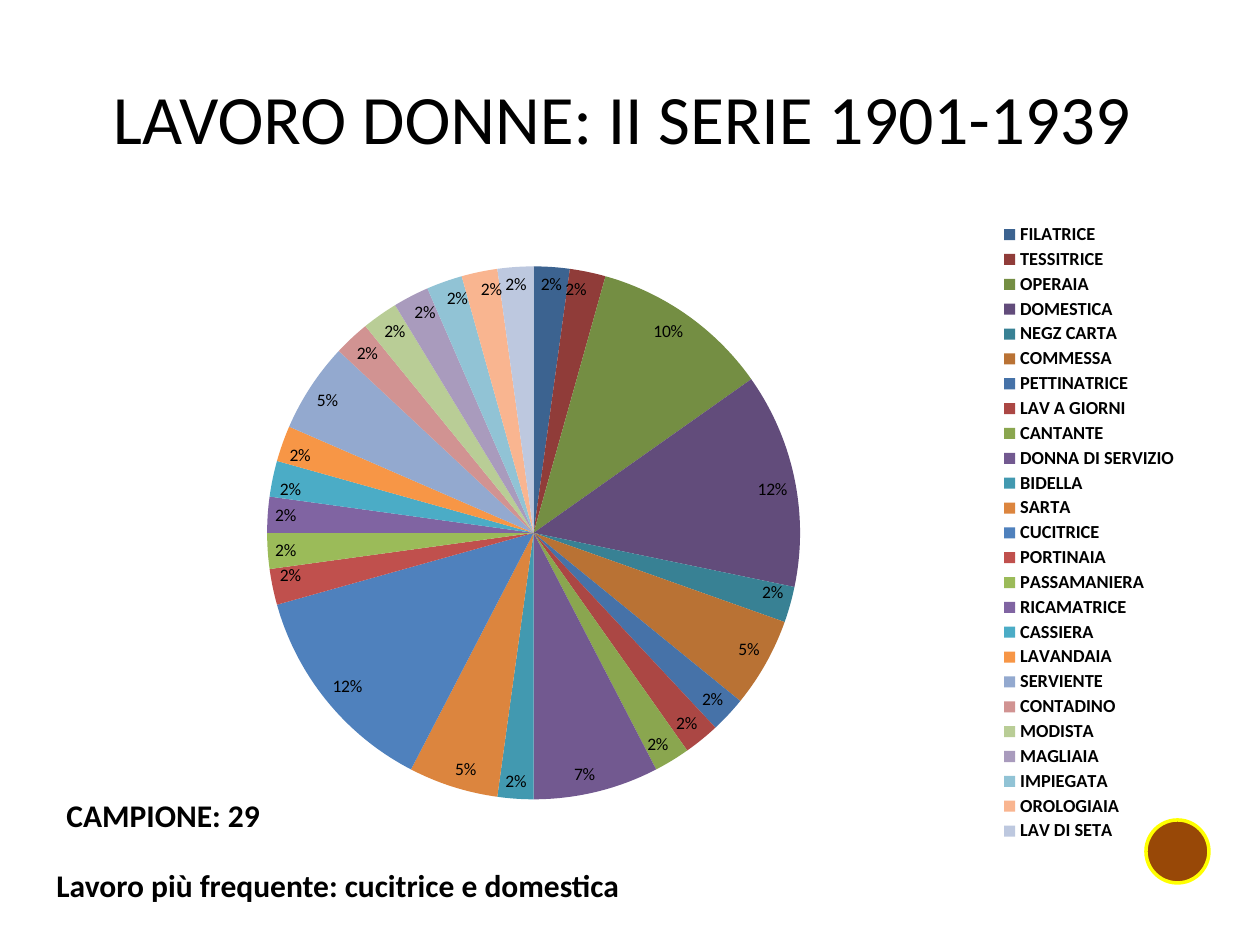
from dataclasses import dataclass
from lxml.etree import SubElement
from pptx import Presentation
from pptx.chart.data import CategoryChartData
from pptx.dml.color import RGBColor
from pptx.enum.chart import XL_CHART_TYPE, XL_LABEL_POSITION, XL_LEGEND_POSITION
from pptx.enum.shapes import MSO_SHAPE
from pptx.enum.text import MSO_ANCHOR, PP_ALIGN
from pptx.oxml.ns import qn
from pptx.util import Emu, Pt

PX_PER_INCH = 126


@dataclass(frozen=True)
class Theme:
    font: str = "Calibri"
    ink: str = "000000"
    marker_fill: str = "984807"
    marker_line: str = "FFFF00"
    title_size: float = 39.6
    note_size: int = 18
    label_size: int = 10
    legend_size: float = 10.5
    slices: tuple = (
        "3C6390", "903C39", "748E43", "624C7B", "388194", "B97234",
        "4672A8", "AB4744", "8AA64F", "725990", "4299B0", "DC853E",
        "4F81BD", "C0504D", "9BBB59", "8064A2", "4BACC6", "F79646",
        "93A9CF", "D19392", "B9CD96", "A99BBD", "91C3D5", "F9B590",
        "BDC8DF",
    )


THEME = Theme()

JOBS = {
    "FILATRICE": 2, "TESSITRICE": 2, "OPERAIA": 10, "DOMESTICA": 12,
    "NEGZ CARTA": 2, "COMMESSA": 5, "PETTINATRICE": 2, "LAV A GIORNI": 2,
    "CANTANTE": 2, "DONNA DI SERVIZIO": 7, "BIDELLA": 2, "SARTA": 5,
    "CUCITRICE": 12, "PORTINAIA": 2, "PASSAMANIERA": 2, "RICAMATRICE": 2,
    "CASSIERA": 2, "LAVANDAIA": 2, "SERVIENTE": 5, "CONTADINO": 2,
    "MODISTA": 2, "MAGLIAIA": 2, "IMPIEGATA": 2, "OROLOGIAIA": 2,
    "LAV DI SETA": 2,
}


def px(length):
    return Emu(round(length * 914400 / PX_PER_INCH))


def place(*lengths):
    return [px(length) for length in lengths]


def style_font(font, size, bold=False):
    font.name = THEME.font
    font.size = Pt(size)
    font.bold = bold
    font.color.rgb = RGBColor.from_string(THEME.ink)


def add_text(page, bounds, text, size, bold=False,
             align=PP_ALIGN.LEFT, anchor=MSO_ANCHOR.TOP):
    frame = page.shapes.add_textbox(*place(*bounds)).text_frame
    frame.word_wrap = True
    frame.vertical_anchor = anchor
    para = frame.paragraphs[0]
    para.alignment = align
    span = para.add_run()
    span.text = text
    style_font(span.font, size, bold)


def set_layout(parent, position, target, bounds):
    layout = parent.find(qn("c:layout"))
    if layout is None:
        layout = SubElement(parent, qn("c:layout"))
        parent.insert(position, layout)
    manual = SubElement(layout, qn("c:manualLayout"))
    settings = {"layoutTarget": target} if target else {}
    settings.update(xMode="edge", yMode="edge")
    settings.update(zip("xywh", bounds))
    for name, value in settings.items():
        SubElement(manual, qn(f"c:{name}")).set("val", str(value))


def add_job_pie(page, bounds):
    chart_data = CategoryChartData()
    chart_data.categories = list(JOBS)
    chart_data.add_series("Series 1", list(JOBS.values()))
    chart = page.shapes.add_chart(
        XL_CHART_TYPE.PIE, *place(*bounds), chart_data).chart
    style_font(chart.font, THEME.label_size)
    chart.has_title = False
    chart.has_legend = True
    legend = chart.legend
    legend.position = XL_LEGEND_POSITION.RIGHT
    legend.include_in_layout = False
    style_font(legend.font, THEME.legend_size, True)
    set_layout(legend._element, 1, None, (0.82, 0, 0.17, 1))

    plot = chart.plots[0]
    plot.vary_by_categories = True
    plot.has_data_labels = True
    labels = plot.data_labels
    labels.show_value = True
    labels.number_format = '0"%"'
    labels.number_format_is_linked = False
    labels.position = XL_LABEL_POSITION.INSIDE_END
    style_font(labels.font, THEME.label_size)
    for index, color in enumerate(THEME.slices):
        fill = plot.series[0].points[index].format.fill
        fill.solid()
        fill.fore_color.rgb = RGBColor.from_string(color)
    set_layout(plot._element.getparent(), 0, "inner", (0.18, 0.07, 0.47, 0.86))


def add_marker(page, bounds):
    marker = page.shapes.add_shape(
        MSO_SHAPE.FLOWCHART_CONNECTOR, *place(*bounds))
    marker.shadow.inherit = False
    marker.fill.solid()
    marker.fill.fore_color.rgb = RGBColor.from_string(THEME.marker_fill)
    marker.line.color.rgb = RGBColor.from_string(THEME.marker_line)
    marker.line.width = Pt(2)


def main():
    deck = Presentation()
    deck.slide_width, deck.slide_height = place(1260, 945)
    page = deck.slides.add_slide(deck.slide_layouts[6])
    add_text(page, (55, 38, 1134, 158), "LAVORO DONNE: II SERIE 1901-1939",
             THEME.title_size, align=PP_ALIGN.CENTER, anchor=MSO_ANCHOR.MIDDLE)
    add_job_pie(page, (63, 221, 1134, 624))
    add_text(page, (54, 790, 248, 50), "CAMPIONE: 29", THEME.note_size, True)
    add_marker(page, (1146, 820, 63, 63))
    add_text(page, (44, 860, 714, 50),
             "Lavoro più frequente: cucitrice e domestica",
             THEME.note_size, True)
    deck.save("out.pptx")


if __name__ == "__main__":
    main()
